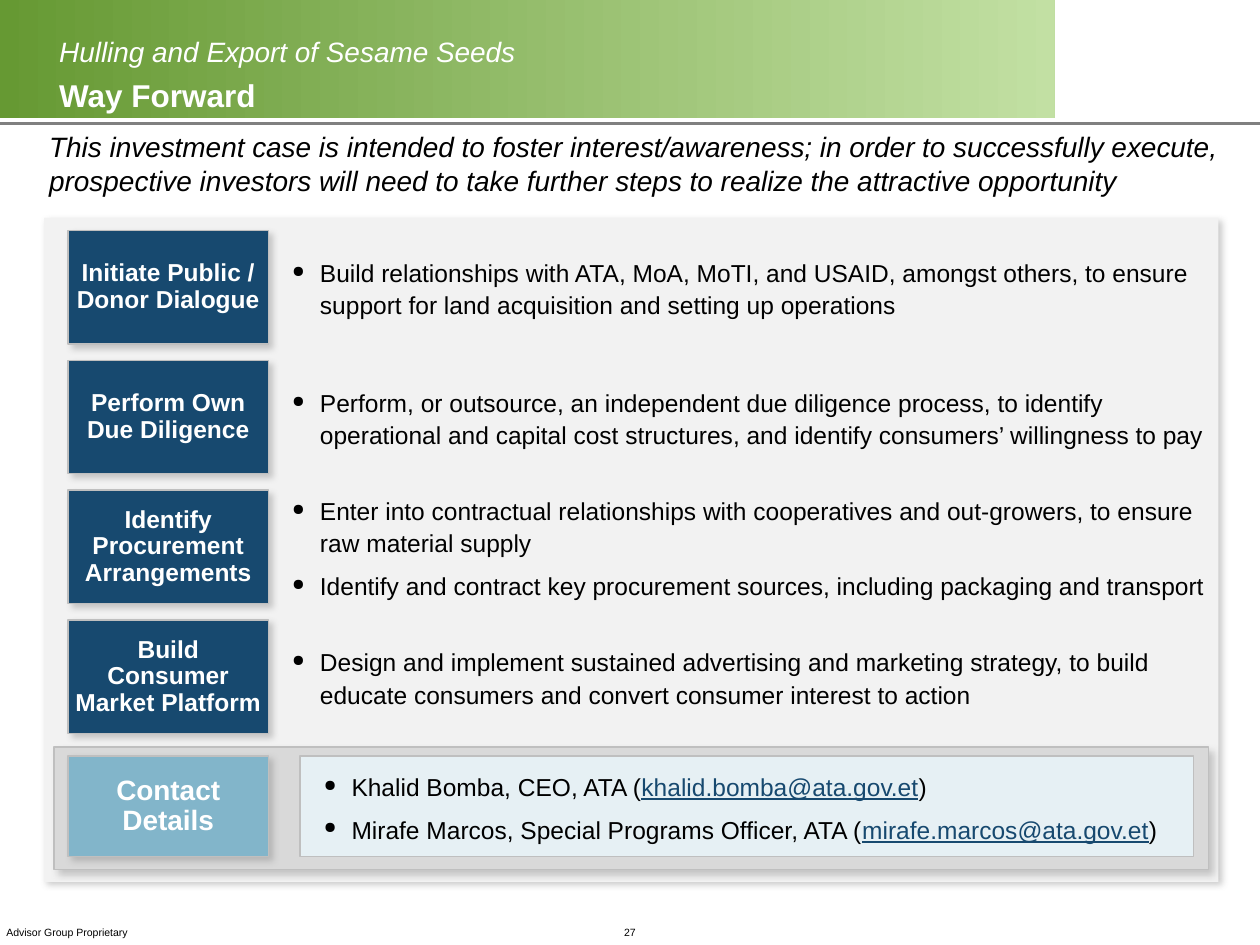
from lxml import etree
from pptx import Presentation
from pptx.dml.color import RGBColor
from pptx.enum.shapes import MSO_CONNECTOR, MSO_SHAPE
from pptx.enum.text import MSO_ANCHOR as Anchor, PP_ALIGN as Align
from pptx.oxml import parse_xml
from pptx.oxml.ns import nsdecls, qn
from pptx.util import Pt

WHITE = RGBColor(0xFF, 0xFF, 0xFF)
BLACK = RGBColor(0, 0, 0)
GREEN = RGBColor(0x66, 0x99, 0x33)
PALE_GREEN = RGBColor(0xC2, 0xE0, 0xA3)
RULE_GREY = RGBColor(0x80, 0x80, 0x80)
PANEL_GREY = RGBColor(0xF2, 0xF2, 0xF2)
BAND_GREY = RGBColor(0xD9, 0xD9, 0xD9)
EDGE_GREY = RGBColor(0xBF, 0xBF, 0xBF)
NAVY = RGBColor(0x17, 0x49, 0x6F)
SKY = RGBColor(0x82, 0xB5, 0xCA)
ICE = RGBColor(0xE6, 0xF0, 0xF4)

SHADOW = f"""<a:effectLst {nsdecls('a')}>
  <a:outerShdw blurRad="{Pt(4)}" dist="{Pt(3)}" dir="2700000" algn="tl" rotWithShape="0">
    <a:srgbClr val="808080"><a:alpha val="40000"/></a:srgbClr>
  </a:outerShdw>
</a:effectLst>"""

prs = Presentation()
prs.slide_width, prs.slide_height = Pt(720), Pt(540)
slide = prs.slides.add_slide(prs.slide_layouts[6])
shapes = slide.shapes


def add_box(left, top, width, height, fill, edge=None, shadow=True):
    box = shapes.add_shape(MSO_SHAPE.RECTANGLE, Pt(left), Pt(top), Pt(width), Pt(height))
    box.shadow.inherit = False
    if shadow:
        props = box._element.spPr
        props.remove(props.find(qn("a:effectLst")))
        props.append(parse_xml(SHADOW))
    box.fill.solid()
    box.fill.fore_color.rgb = fill
    if edge is None:
        box.line.fill.background()
    else:
        box.line.color.rgb = edge
        box.line.width = Pt(0.75)
    return box


def write(shape, paragraphs, size=14, color=BLACK, bold=False, italic=False, align=Align.LEFT,
          anchor=Anchor.MIDDLE, spacing=1.0, bullet=False, wrap=True, side=3.6, edge=3.6):
    """Each paragraph is a list of (text, font overrides) runs."""
    frame = shape.text_frame
    frame.word_wrap = wrap
    frame.vertical_anchor = anchor
    frame.margin_left = frame.margin_right = Pt(side)
    frame.margin_top = frame.margin_bottom = Pt(edge)
    for i, runs in enumerate(paragraphs):
        para = frame.add_paragraph() if i else frame.paragraphs[0]
        para.alignment = align
        para.line_spacing = spacing
        if bullet:
            para.space_after = Pt(6)
            props = para._p.get_or_add_pPr()
            props.set("marL", str(Pt(23.76)))
            props.set("indent", str(Pt(-15.84)))
            etree.SubElement(props, qn("a:buSzPct"), val="65000")
            etree.SubElement(props, qn("a:buChar"), char="●")
        for text, changes in runs:
            look = {"size": size, "color": color, "bold": bold, "italic": italic,
                    "underline": False} | changes
            run = para.add_run()
            run.text = text
            run.font.name = "Arial"
            run.font.size = Pt(look["size"])
            run.font.color.rgb = look["color"]
            run.font.bold = look["bold"]
            run.font.italic = look["italic"]
            run.font.underline = look["underline"]
            if look.get("line_break"):
                para.add_line_break()


# Header band and rule
header = add_box(0, 0, 602.64, 67.68, GREEN, shadow=False)
header.fill.gradient()
header.fill.gradient_angle = 0
for stop, color, position in zip(header.fill.gradient_stops, (GREEN, PALE_GREEN), (0, 1)):
    stop.color.rgb = color
    stop.position = position

rule = shapes.add_connector(MSO_CONNECTOR.STRAIGHT, Pt(0), Pt(70.56), Pt(720), Pt(70.56))
rule.line.color.rgb = RULE_GREY
rule.line.width = Pt(2.25)
etree.SubElement(rule._element.spPr, qn("a:effectLst"))

# Title and lead sentence
title = shapes.add_textbox(Pt(30.24), Pt(2.88), Pt(566.64), Pt(61.92))
write(title, [[("Hulling and Export of Sesame Seeds", {"size": 16, "italic": True, "line_break": True}),
               ("Way Forward", {"bold": True})]],
      size=18, color=WHITE, anchor=Anchor.BOTTOM, spacing=1.2, edge=0)

lead = shapes.add_textbox(Pt(24.48), Pt(70.56), Pt(683.28), Pt(46.08))
write(lead, [[("This investment case is intended to foster interest/awareness; in order to "
               "successfully execute, prospective investors will need to take further steps "
               "to realize the attractive opportunity", {})]],
      size=16, italic=True, anchor=Anchor.TOP)

# Panel with the four steps
add_box(25.2, 124.56, 671.04, 379.44, PANEL_GREY)

STEPS = [
    ("Initiate Public / Donor Dialogue",
     ["Build relationships with ATA, MoA, MoTI, and USAID, amongst others, to ensure "
      "support for land acquisition and setting up operations"]),
    ("Perform Own Due Diligence",
     ["Perform, or outsource, an independent due diligence process, to identify operational "
      "and capital cost structures, and identify consumers’ willingness to pay"]),
    ("Identify Procurement Arrangements",
     ["Enter into contractual relationships with cooperatives and out-growers, to ensure "
      "raw material supply",
      "Identify and contract key procurement sources, including packaging and transport"]),
    ("Build Consumer Market Platform",
     ["Design and implement sustained advertising and marketing strategy, to build educate "
      "consumers and convert consumer interest to action"]),
]
LABEL_LEFT, LABEL_WIDTH = 38.88, 114.48
STEP_TOP, STEP_HEIGHT, STEP_PITCH = 131.76, 64.8, 74.16

for row, (step, actions) in enumerate(STEPS):
    top = STEP_TOP + row * STEP_PITCH
    label = add_box(LABEL_LEFT, top, LABEL_WIDTH, STEP_HEIGHT, NAVY, EDGE_GREY)
    write(label, [[(step, {})]], color=WHITE, bold=True, align=Align.CENTER, spacing=0.9)
    detail = shapes.add_textbox(Pt(155.52), Pt(top), Pt(540), Pt(STEP_HEIGHT))
    write(detail, [[(action, {})] for action in actions], spacing=1.1, bullet=True)

# Contact band
add_box(30.96, 426.96, 659.52, 69.84, BAND_GREY, EDGE_GREY)
contact_label = add_box(LABEL_LEFT, 432, LABEL_WIDTH, 57.6, SKY, EDGE_GREY)
write(contact_label, [[("Contact Details", {})]], size=16, color=WHITE, bold=True,
      align=Align.CENTER, spacing=0.9, side=5.76)

CONTACTS = [("Khalid Bomba, CEO, ATA", "khalid.bomba@ata.gov.et"),
            ("Mirafe Marcos, Special Programs Officer, ATA", "mirafe.marcos@ata.gov.et")]
contact_list = add_box(171.36, 432, 510.48, 57.6, ICE, EDGE_GREY, shadow=False)
write(contact_list,
      [[(f"{person} (", {}), (email, {"color": NAVY, "underline": True}), (")", {})]
       for person, email in CONTACTS],
      spacing=1.1, bullet=True, side=5.76)

# Footer
for text, left, width, align in (("Advisor Group Proprietary", 0, 78.48, Align.LEFT),
                                 ("27", 352.8, 14.4, Align.CENTER)):
    footer = shapes.add_textbox(Pt(left), Pt(525.6), Pt(width), Pt(14.4))
    write(footer, [[(text, {})]], size=6, align=align, anchor=Anchor.BOTTOM, wrap=False)

prs.save("out.pptx")
